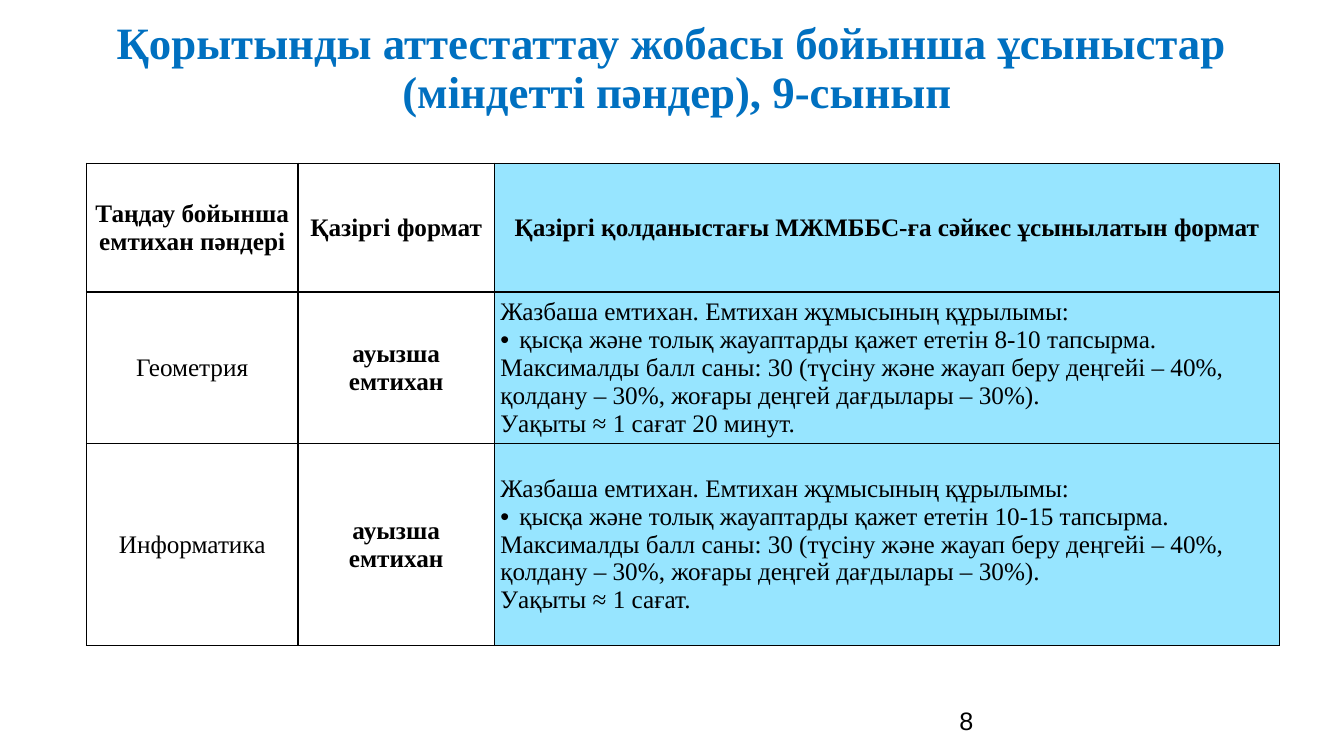
from dataclasses import dataclass

from lxml import etree
from pptx import Presentation
from pptx.dml.color import RGBColor
from pptx.enum.text import MSO_ANCHOR, PP_ALIGN
from pptx.oxml.ns import qn
from pptx.util import Cm, Pt

LEFT, CENTER = PP_ALIGN.LEFT, PP_ALIGN.CENTER
TOP, MIDDLE = MSO_ANCHOR.TOP, MSO_ANCHOR.MIDDLE


@dataclass(frozen=True)
class Theme:
    serif: str = "Times New Roman"
    sans: str = "Arial"
    ink: str = "000000"
    heading: str = "0070C0"
    highlight: str = "97E5FF"
    title_size: int = 32
    body_size: int = 18
    border_width: int = 1


THEME = Theme()


def write_text(paragraph, text, font=THEME.serif, size=THEME.body_size, color=THEME.ink,
               bold=False, align=LEFT, spacing=None, bullet=False):
    paragraph.text = text
    paragraph.alignment = align
    if spacing:
        paragraph.line_spacing = spacing
    if bullet:
        properties = paragraph._p.get_or_add_pPr()
        indent = Cm(0.48)
        properties.set("marL", str(indent))
        properties.set("indent", str(-indent))
        etree.SubElement(properties, qn("a:buFont"), typeface=THEME.sans)
        etree.SubElement(properties, qn("a:buChar"), char="•")
    for run in paragraph.runs:
        run.font.name = font
        run.font.size = Pt(size)
        run.font.bold = bold
        run.font.color.rgb = RGBColor.from_string(color)


class SlideBuilder:
    def __init__(self, slide, theme):
        self.slide = slide
        self.theme = theme

    def text(self, left, top, width, height, content, **style):
        box = self.slide.shapes.add_textbox(Cm(left), Cm(top), Cm(width), Cm(height))
        frame = box.text_frame
        frame.word_wrap = True
        frame.vertical_anchor = TOP
        write_text(frame.paragraphs[0], content, **style)

    def table(self, left, top, widths, heights, rows):
        grid = self.slide.shapes.add_table(
            len(heights), len(widths), Cm(left), Cm(top), Cm(sum(widths)), Cm(sum(heights))).table
        grid.first_row = grid.horz_banding = False
        for column, width in zip(grid.columns, widths):
            column.width = Cm(width)
        for row, height in zip(grid.rows, heights):
            row.height = Cm(height)
        for row_index, row in enumerate(rows):
            for column_index, lines in enumerate(row):
                self.cell(grid.cell(row_index, column_index), lines,
                          header=row_index == 0, format_column=column_index == 1,
                          proposal=column_index == 2)

    def cell(self, cell, lines, header, format_column, proposal):
        cell.vertical_anchor = MIDDLE
        cell.margin_left = cell.margin_right = Cm(0.15)
        cell.margin_top = cell.margin_bottom = 0
        self.borders(cell)
        if proposal:
            cell.fill.solid()
            cell.fill.fore_color.rgb = RGBColor.from_string(self.theme.highlight)
        else:
            cell.fill.background()
        frame = cell.text_frame
        for index, line in enumerate(lines):
            paragraph = frame.add_paragraph() if index else frame.paragraphs[0]
            write_text(paragraph, line, bold=header or format_column,
                       align=LEFT if proposal and not header else CENTER,
                       bullet=proposal and index == 1)

    def borders(self, cell):
        properties = cell._tc.get_or_add_tcPr()
        for side in ("lnL", "lnR", "lnT", "lnB"):
            line = etree.SubElement(properties, qn(f"a:{side}"),
                                    w=str(Pt(self.theme.border_width)))
            fill = etree.SubElement(line, qn("a:solidFill"))
            etree.SubElement(fill, qn("a:srgbClr"), val=self.theme.ink)


def exam_row(subject, task_count, duration):
    return [
        [subject],
        ["ауызша емтихан"],
        ["Жазбаша емтихан. Емтихан жұмысының құрылымы:",
         f"қысқа және толық жауаптарды қажет ететін {task_count} тапсырма.",
         "Максималды балл саны: 30 (түсіну және жауап беру деңгейі – 40%, "
         "қолдану – 30%, жоғары деңгей дағдылары – 30%).",
         f"Уақыты ≈ {duration}."],
    ]


exam_rows = [
    [["Таңдау бойынша емтихан пәндері"], ["Қазіргі формат"],
     ["Қазіргі қолданыстағы МЖМББС-ға сәйкес ұсынылатын формат"]],
    exam_row("Геометрия", "8-10", "1 сағат 20 минут"),
    exam_row("Информатика", "10-15", "1 сағат"),
]

presentation = Presentation()
presentation.slide_width, presentation.slide_height = Cm(33.87), Cm(19.05)
blank_layout = presentation.slide_layouts[6]
builder = SlideBuilder(presentation.slides.add_slide(blank_layout), THEME)

builder.text(23.93, 17.65, 7.62, 1.02, "8", font=THEME.sans)
builder.table(2.18, 4.11, [5.33, 4.95, 19.79], [3.25, 3.53, 5.1], exam_rows)
builder.text(1.14, 0.41, 31.85, 1.55,
             "Қорытынды аттестаттау жобасы бойынша ұсыныстар \v(міндетті пәндер), 9-сынып",
             size=THEME.title_size, color=THEME.heading, bold=True, align=CENTER, spacing=0.9)

presentation.save("out.pptx")
